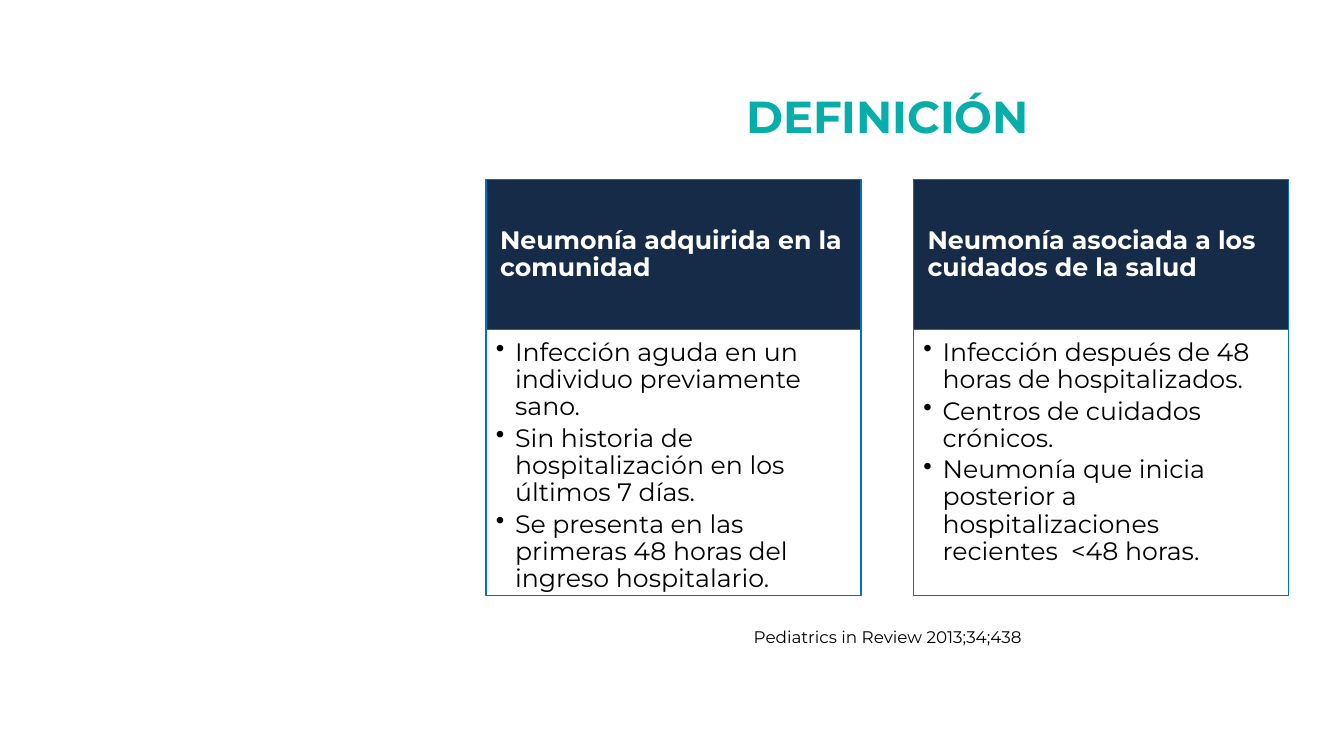
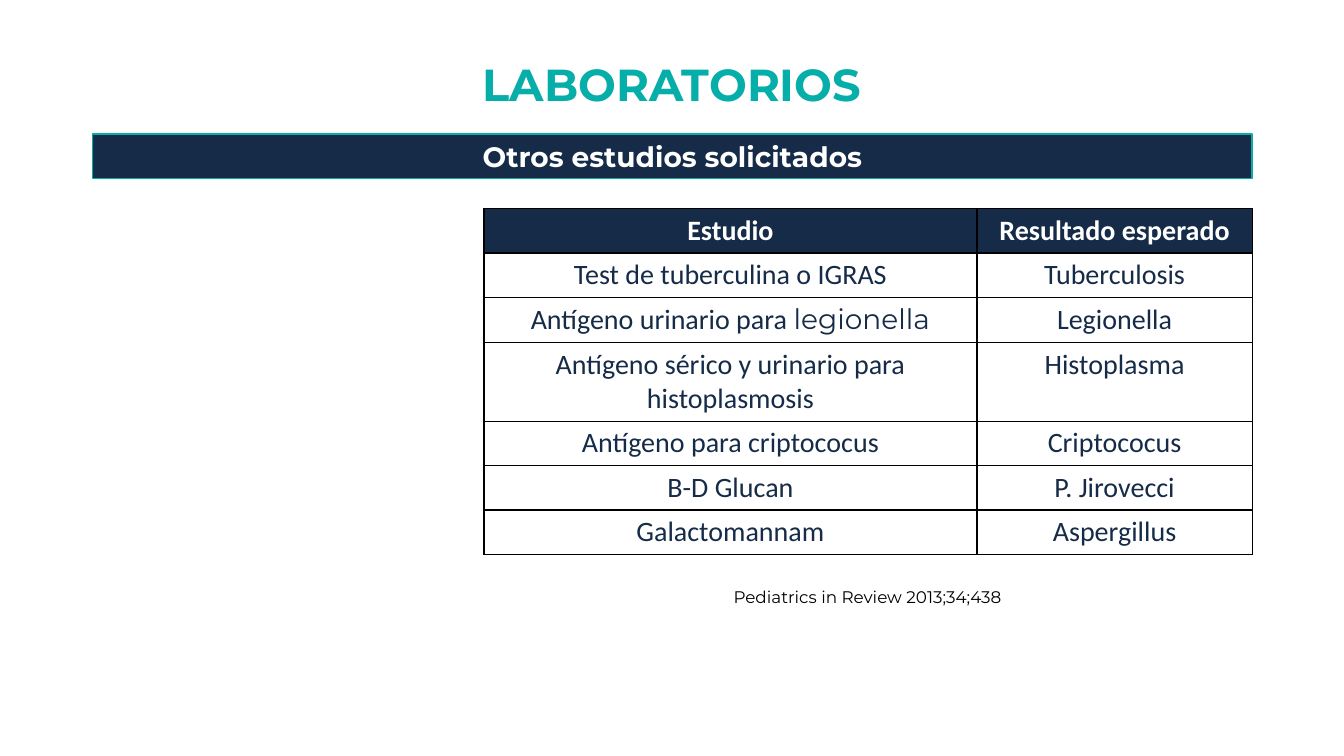
"""Build two slides on pneumonia: its definition and its laboratory studies."""
import lxml.etree
import pptx
import pptx.dml.color
import pptx.enum.shapes
import pptx.enum.text
import pptx.oxml.ns
import pptx.util

Inches = pptx.util.Inches
Pt = pptx.util.Pt
RGBColor = pptx.dml.color.RGBColor
ALIGN = pptx.enum.text.PP_ALIGN
ANCHOR = pptx.enum.text.MSO_ANCHOR
qn = pptx.oxml.ns.qn

NAVY = RGBColor(0x15, 0x2B, 0x48)
TEAL = RGBColor(0x06, 0xAE, 0xAA)
BLUE = RGBColor(0x00, 0x70, 0xC0)
WHITE = RGBColor(0xFF, 0xFF, 0xFF)
BLACK = RGBColor(0x00, 0x00, 0x00)
SANS = "Montserrat"
PLAIN = "Calibri"

CARDS = [
    ("Neumonía adquirida en la comunidad", [
        "Infección aguda en un individuo previamente sano.",
        "Sin historia de hospitalización en los últimos 7 días.",
        "Se presenta en las primeras 48 horas del ingreso hospitalario."]),
    ("Neumonía asociada a los cuidados de la salud", [
        "Infección después de 48 horas de hospitalizados.",
        "Centros de cuidados crónicos.",
        "Neumonía que inicia posterior a hospitalizaciones recientes  <48 horas."]),
]
TESTS = [
    (["Estudio"], "Resultado esperado"),
    (["Test de tuberculina o IGRAS"], "Tuberculosis"),
    (["Antígeno urinario para ", "legionella"], "Legionella"),
    (["Antígeno sérico y urinario para histoplasmosis"], "Histoplasma"),
    (["Antígeno para criptococus"], "Criptococus"),
    (["B-D Glucan"], "P. Jirovecci"),
    (["Galactomannam"], "Aspergillus"),
]


def add_run(para, text, size, color, bold=False, face=SANS):
    """Add one formatted run to a paragraph."""
    run = para.add_run()
    run.text = text
    run.font.name = face
    run.font.size = Pt(size)
    run.font.bold = bold
    run.font.color.rgb = color


def add_title(deck, text, left, top):
    """Add a title-only slide and place its title."""
    slide = deck.slides.add_slide(deck.slide_layouts[5])
    title = slide.shapes.title
    title.left, title.top = Inches(left), Inches(top)
    title.width, title.height = Inches(5.61), Inches(0.93)
    title.text_frame.vertical_anchor = ANCHOR.MIDDLE
    para = title.text_frame.paragraphs[0]
    para.alignment = ALIGN.CENTER
    para.line_spacing = 0.9
    add_run(para, text, 32, TEAL, True)
    return slide


def add_box(slide, left, top, width, height, fill, line, pads=(0.1, 0.05, 0.1, 0.05)):
    """Add a filled rectangle and return its text frame."""
    box = slide.shapes.add_shape(
        pptx.enum.shapes.MSO_SHAPE.RECTANGLE,
        Inches(left), Inches(top), Inches(width), Inches(height))
    box.shadow.inherit = False
    box.fill.solid()
    box.fill.fore_color.rgb = fill
    box.line.color.rgb = line
    box.line.width = Pt(1)
    frame = box.text_frame
    frame.word_wrap = True
    frame.vertical_anchor = ANCHOR.MIDDLE
    frame.margin_left, frame.margin_top, frame.margin_right, frame.margin_bottom = map(Inches, pads)
    return frame


def add_bullet(para, text):
    """Turn a paragraph into a bullet with a hanging indent."""
    props = para._p.get_or_add_pPr()
    props.set("marL", str(Inches(0.19)))
    props.set("indent", str(-Inches(0.19)))
    lxml.etree.SubElement(props, qn("a:buChar")).set("char", "•")
    para.alignment = ALIGN.LEFT
    para.line_spacing = 0.9
    para.space_after = Pt(3)
    add_run(para, text, 18, BLACK)


def add_card(slide, left, head, items):
    """Add a dark heading over a bordered list."""
    frame = add_box(slide, left, 1.78, 3.72, 1.49, NAVY, BLUE, (0.14, 0.08, 0.14, 0.08))
    para = frame.paragraphs[0]
    para.alignment = ALIGN.LEFT
    para.line_spacing = 0.9
    add_run(para, head, 18, WHITE, True)
    frame = add_box(slide, left, 3.27, 3.72, 2.64, WHITE, BLUE, (0.1, 0.1, 0.14, 0.16))
    frame.vertical_anchor = ANCHOR.TOP
    for num, item in enumerate(items):
        add_bullet(frame.add_paragraph() if num else frame.paragraphs[0], item)


def add_source(slide, left, top):
    """Add the centred citation."""
    box = slide.shapes.add_textbox(Inches(left), Inches(top), Inches(6.67), Inches(0.3))
    box.text_frame.word_wrap = True
    para = box.text_frame.paragraphs[0]
    para.alignment = ALIGN.CENTER
    add_run(para, "Pediatrics in Review 2013;34;438", 12, BLACK)


def add_edges(cell):
    """Draw a thin black border on all sides of a cell."""
    props = cell._tc.get_or_add_tcPr()
    for side in ("a:lnL", "a:lnR", "a:lnT", "a:lnB"):
        edge = lxml.etree.SubElement(props, qn(side), w=str(Pt(1)))
        fill = lxml.etree.SubElement(edge, qn("a:solidFill"))
        lxml.etree.SubElement(fill, qn("a:srgbClr"), val=str(BLACK))


def fill_cell(cell, parts, head):
    """Fill a cell; any part after the first uses the title face."""
    add_edges(cell)
    cell.fill.solid()
    cell.fill.fore_color.rgb = NAVY if head else WHITE
    para = cell.text_frame.paragraphs[0]
    para.alignment = ALIGN.CENTER
    for num, part in enumerate(parts):
        add_run(para, part, 20, WHITE if head else NAVY, head, SANS if num else PLAIN)


def add_tests(slide):
    """Add the table of studies and expected results."""
    table = slide.shapes.add_table(
        len(TESTS), 2, Inches(4.8), Inches(2.07), Inches(7.62), Inches(3.37)).table
    table.columns[0].width = Inches(4.89)
    table.columns[1].width = Inches(2.73)
    for num, (study, result) in enumerate(TESTS):
        table.rows[num].height = Inches(0.77 if num == 3 else 0.43)
        fill_cell(table.cell(num, 0), study, num == 0)
        fill_cell(table.cell(num, 1), [result], num == 0)


def main():
    """Build and save the deck."""
    deck = pptx.Presentation()
    deck.slide_width, deck.slide_height = Inches(13.33), Inches(7.5)

    slide = add_title(deck, "DEFINICIÓN", 6, 0.72)
    for num, (head, items) in enumerate(CARDS):
        add_card(slide, 4.82 + num * 4.24, head, items)
    add_source(slide, 5.47, 6.17)

    slide = add_title(deck, "LABORATORIOS", 3.86, 0.4)
    para = add_box(slide, 0.92, 1.33, 11.5, 0.44, NAVY, TEAL).paragraphs[0]
    para.alignment = ALIGN.CENTER
    add_run(para, "Otros estudios solicitados", 20, WHITE, True)
    add_tests(slide)
    add_source(slide, 5.27, 5.77)

    deck.save("out.pptx")


if __name__ == "__main__":
    main()
